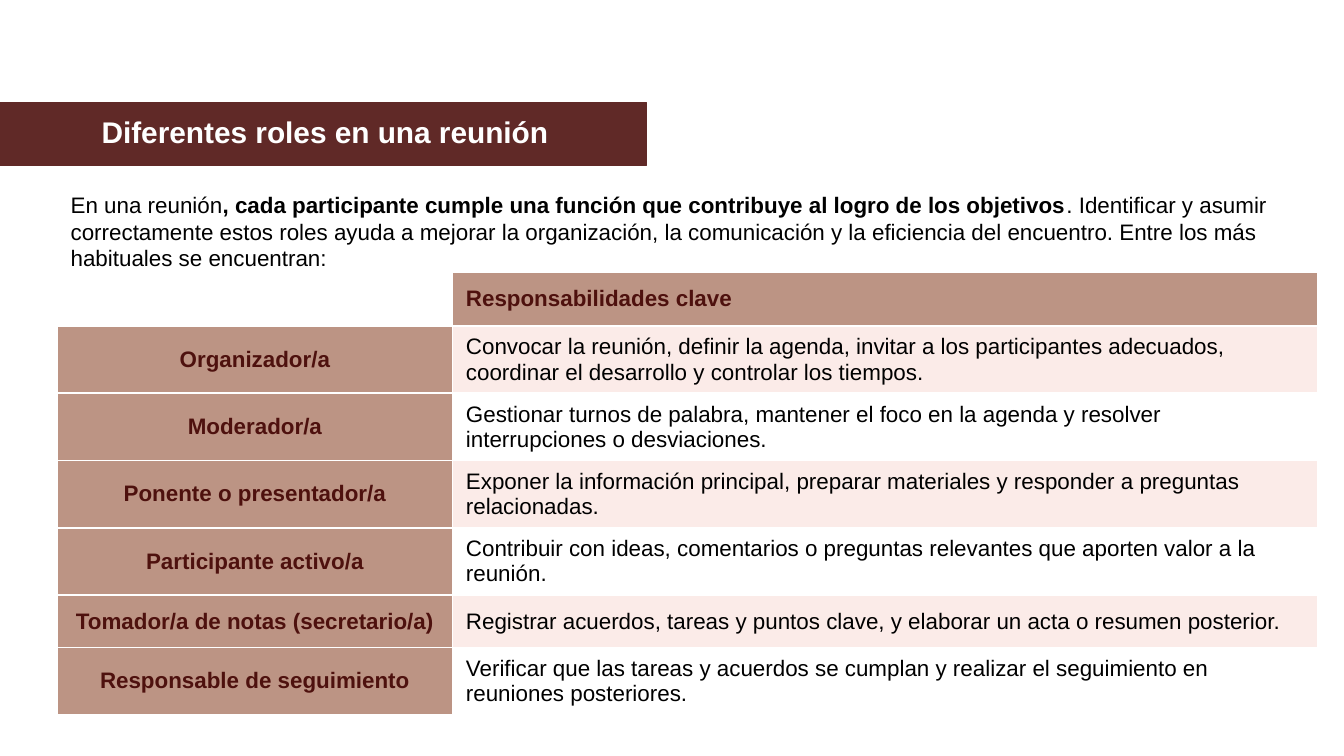
"""Build a slide that lists the roles in a meeting and their responsibilities."""
from dataclasses import dataclass

import pptx
import pptx.dml.color
import pptx.enum.shapes
import pptx.enum.text
import pptx.slide
import pptx.table
import pptx.text.text
import pptx.util

COLUMNS, ROWS = 100, 56.25
UNIT = pptx.util.Inches(0.1)
FONT = "Arial"
MAROON = pptx.dml.color.RGBColor(0x60, 0x29, 0x27)
DARK_RED = pptx.dml.color.RGBColor(0x4E, 0x11, 0x0E)
CLAY = pptx.dml.color.RGBColor(0xBC, 0x94, 0x84)
BLUSH = pptx.dml.color.RGBColor(0xFB, 0xEB, 0xE8)
WHITE = pptx.dml.color.RGBColor(0xFF, 0xFF, 0xFF)
BLACK = pptx.dml.color.RGBColor(0, 0, 0)
CENTER = pptx.enum.text.PP_ALIGN.CENTER
LEFT = pptx.enum.text.PP_ALIGN.LEFT


@dataclass(frozen=True)
class Area:
    """A rectangle in grid columns and rows."""
    column: float
    row: float
    width: float
    height: float

    def lengths(self) -> tuple[int, int, int, int]:
        """Return left, top, width and height as slide lengths."""
        return tuple(round(value * UNIT) for value in
                     (self.column, self.row, self.width, self.height))


@dataclass(frozen=True)
class Role:
    """A meeting role and what it is responsible for."""
    name: str
    duty: str


@dataclass(frozen=True)
class Style:
    """The look of a paragraph."""
    color: pptx.dml.color.RGBColor
    bold: bool = False
    align: pptx.enum.text.PP_ALIGN = LEFT
    size: int = 12


BAR = Area(0, 7.62, 48.1, 4.7)
TITLE = Area(0.64, 7.94, 47.1, 3.7)
INTRO = Area(4.27, 13.7, 93.8, 7.1)
TABLE = Area(4.27, 20.25, 93.8, 32.9)
NAME_WIDTH = 29.4
ROW_HEIGHT = 3.9

TITLE_STYLE = Style(WHITE, True, CENTER, 16)
HEADER_STYLE = Style(DARK_RED, True)
NAME_STYLE = Style(DARK_RED, True, CENTER)
BODY_STYLE = Style(BLACK)

INTRO_SPANS = (
    ("En una reunión", False),
    (", cada participante cumple una función que contribuye al logro de los objetivos", True),
    (". Identificar y asumir correctamente estos roles ayuda a mejorar la organización, "
     "la comunicación y la eficiencia del encuentro. Entre los más habituales se encuentran:",
     False),
)
ROLES = (
    Role("Organizador/a", "Convocar la reunión, definir la agenda, invitar a los participantes "
         "adecuados, coordinar el desarrollo y controlar los tiempos."),
    Role("Moderador/a", "Gestionar turnos de palabra, mantener el foco en la agenda y resolver "
         "interrupciones o desviaciones."),
    Role("Ponente o presentador/a", "Exponer la información principal, preparar materiales y "
         "responder a preguntas relacionadas."),
    Role("Participante activo/a", "Contribuir con ideas, comentarios o preguntas relevantes que "
         "aporten valor a la reunión."),
    Role("Tomador/a de notas (secretario/a)", "Registrar acuerdos, tareas y puntos clave, y "
         "elaborar un acta o resumen posterior."),
    Role("Responsable de seguimiento", "Verificar que las tareas y acuerdos se cumplan y realizar "
         "el seguimiento en reuniones posteriores."),
)


def format_paragraph(para: pptx.text.text._Paragraph, style: Style) -> None:
    """Apply a style to a paragraph."""
    para.alignment = style.align
    para.font.name = FONT
    para.font.size = pptx.util.Pt(style.size)
    para.font.bold = style.bold
    para.font.color.rgb = style.color


def add_title(page: pptx.slide.Slide) -> None:
    """Place the title on its coloured bar."""
    title = page.shapes.title
    title.left, title.top, title.width, title.height = TITLE.lengths()
    frame = title.text_frame
    frame.text = "Diferentes roles en una reunión"
    frame.auto_size = pptx.enum.text.MSO_AUTO_SIZE.SHAPE_TO_FIT_TEXT
    format_paragraph(frame.paragraphs[0], TITLE_STYLE)
    bar = page.shapes.add_shape(pptx.enum.shapes.MSO_SHAPE.RECTANGLE, *BAR.lengths())
    bar.shadow.inherit = False
    bar.fill.solid()
    bar.fill.fore_color.rgb = MAROON
    bar.line.color.rgb = MAROON
    bar.line.width = pptx.util.Pt(0.75)
    title.element.addprevious(bar.element)


def add_intro(page: pptx.slide.Slide) -> None:
    """Add the introduction with its emphasised phrase."""
    frame = page.shapes.add_textbox(*INTRO.lengths()).text_frame
    frame.word_wrap = True
    frame.auto_size = pptx.enum.text.MSO_AUTO_SIZE.SHAPE_TO_FIT_TEXT
    para = frame.paragraphs[0]
    format_paragraph(para, BODY_STYLE)
    for text, bold in INTRO_SPANS:
        span = para.add_run()
        span.text = text
        span.font.bold = bold


def fill_cell(cell: pptx.table._Cell, text: str, style: Style,
              color: pptx.dml.color.RGBColor) -> None:
    """Write and colour one table cell."""
    cell.text = text
    cell.vertical_anchor = pptx.enum.text.MSO_ANCHOR.MIDDLE
    format_paragraph(cell.text_frame.paragraphs[0], style)
    cell.fill.solid()
    cell.fill.fore_color.rgb = color


def add_roles(page: pptx.slide.Slide) -> None:
    """Add the table of roles."""
    holder = page.shapes.add_table(len(ROLES) + 1, 2, *TABLE.lengths())
    table = holder.table
    for column, width in zip(table.columns, (NAME_WIDTH, TABLE.width - NAME_WIDTH)):
        column.width = round(width * UNIT)
    for row in table.rows:
        row.height = round(ROW_HEIGHT * UNIT)
    holder.height = round(TABLE.height * UNIT)
    table.cell(0, 0).fill.background()
    fill_cell(table.cell(0, 1), "Responsabilidades clave", HEADER_STYLE, CLAY)
    for index, role in enumerate(ROLES, start=1):
        fill_cell(table.cell(index, 0), role.name, NAME_STYLE, CLAY)
        fill_cell(table.cell(index, 1), role.duty, BODY_STYLE, BLUSH if index % 2 else WHITE)


def main() -> None:
    """Build and save the deck."""
    deck = pptx.Presentation()
    deck.slide_width = round(COLUMNS * UNIT)
    deck.slide_height = round(ROWS * UNIT)
    page = deck.slides.add_slide(deck.slide_layouts[5])
    add_title(page)
    add_intro(page)
    add_roles(page)
    deck.save("out.pptx")


if __name__ == "__main__":
    main()
